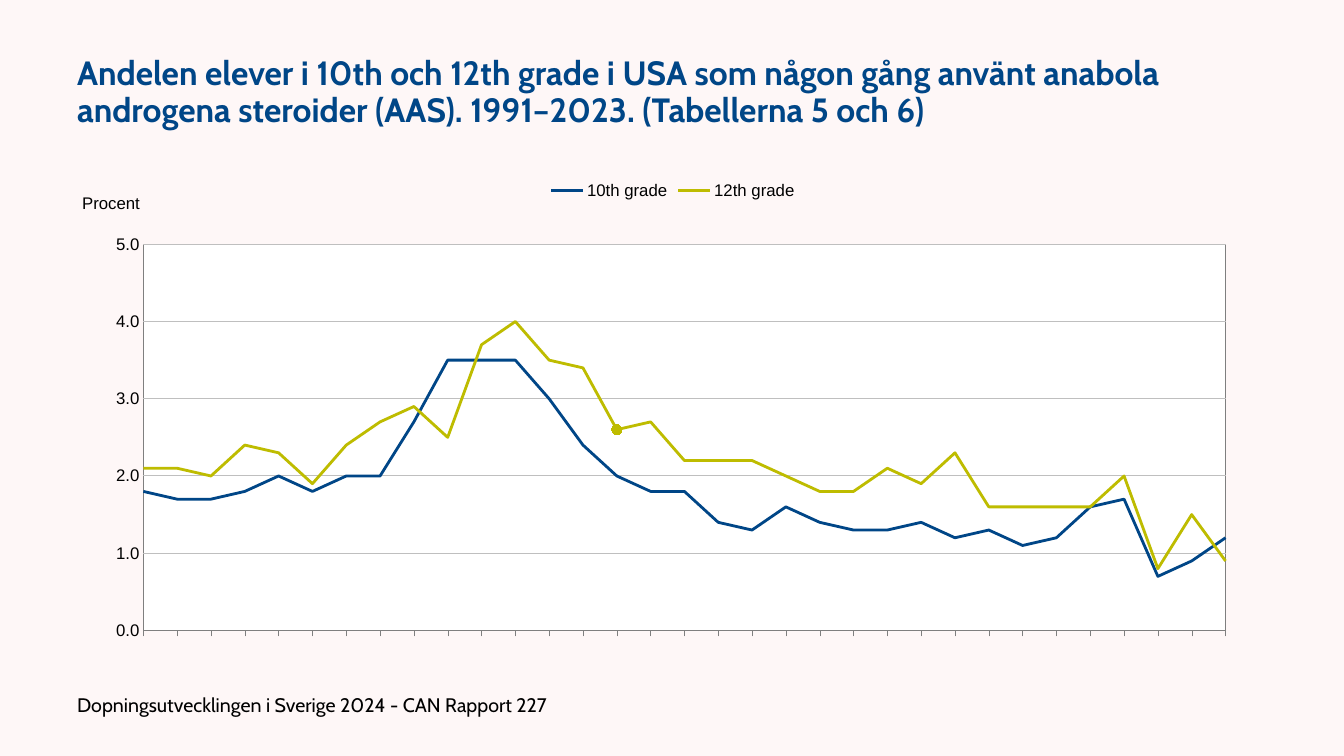
import pptx
import pptx.chart.data
import pptx.dml.color
import pptx.enum.chart
import pptx.enum.text
import pptx.oxml
import pptx.oxml.ns
import pptx.oxml.xmlchemy
import pptx.util

PX = 914400 / 100.8
COLORS = {"page": "FEF7F7", "blue": "004687", "olive": "BEBC00", "text": "000000",
          "plot": "FFFFFF", "axis": "7F7F7F", "grid": "BFBFBF"}
YEARS = range(1991, 2024)
GRADES = [
    ("10th grade", "blue",
     [1.8, 1.7, 1.7, 1.8, 2, 1.8, 2, 2, 2.7, 3.5, 3.5, 3.5, 3, 2.4, 2, 1.8, 1.8,
      1.4, 1.3, 1.6, 1.4, 1.3, 1.3, 1.4, 1.2, 1.3, 1.1, 1.2, 1.6, 1.7, 0.7, 0.9, 1.2]),
    ("12th grade", "olive",
     [2.1, 2.1, 2, 2.4, 2.3, 1.9, 2.4, 2.7, 2.9, 2.5, 3.7, 4, 3.5, 3.4, 2.6, 2.7, 2.2,
      2.2, 2.2, 2, 1.8, 1.8, 2.1, 1.9, 2.3, 1.6, 1.6, 1.6, 1.6, 2, 0.8, 1.5, 0.9]),
]
MARKED_YEAR = 2005


def px(length):
    return pptx.util.Emu(round(length * PX))


def color(name):
    return pptx.dml.color.RGBColor.from_string(COLORS[name])


def style_font(font, size, face, shade="text", bold=False):
    font.size = pptx.util.Pt(size)
    font.name = face
    font.bold = bold
    font.color.rgb = color(shade)


def style_line(line, shade, width):
    line.color.rgb = color(shade)
    line.width = pptx.util.Pt(width)


def chart_xml(body):
    """Return an element from chart markup."""
    tag, rest = body.split(" ", 1)
    return pptx.oxml.parse_xml(f"<{tag} {pptx.oxml.ns.nsdecls('c', 'a')} {rest}")


def drop(parent, tag):
    for child in parent.findall(pptx.oxml.ns.qn(tag)):
        parent.remove(child)


def manual_layout(x, y, size=None):
    """Return a layout placed by fractions of the chart's width and height."""
    parts = [("xMode", "edge"), ("yMode", "edge"), ("x", x), ("y", y)]
    if size:
        parts = [("layoutTarget", "inner"), *parts, ("w", size[0]), ("h", size[1])]
    values = "".join(f'<c:{tag} val="{value}"/>' for tag, value in parts)
    return chart_xml(f"c:layout ><c:manualLayout>{values}</c:manualLayout></c:layout>")


def fill_placeholder(holder, box, text, size, shade, bold=False):
    holder.left, holder.top, holder.width, holder.height = map(px, box)
    frame = holder.text_frame
    frame.word_wrap = True
    frame.auto_size = pptx.enum.text.MSO_AUTO_SIZE.NONE
    frame.vertical_anchor = pptx.enum.text.MSO_ANCHOR.MIDDLE
    para = frame.paragraphs[0]
    para.alignment = pptx.enum.text.PP_ALIGN.LEFT
    para.line_spacing = 0.9
    para.space_before = pptx.util.Pt(0)
    properties = para._p.get_or_add_pPr()
    properties.set("marL", "0")
    properties.set("indent", "0")
    properties.append(pptx.oxml.parse_xml(f"<a:buNone {pptx.oxml.ns.nsdecls('a')}/>"))
    span = para.add_run()
    span.text = text
    style_font(span.font, size, "Cabin", shade, bold)


def style_year_axis(axis):
    axis.tick_label_position = pptx.enum.chart.XL_TICK_LABEL_POSITION.NONE
    axis.major_tick_mark = pptx.enum.chart.XL_TICK_MARK.OUTSIDE
    axis.minor_tick_mark = pptx.enum.chart.XL_TICK_MARK.NONE
    style_line(axis.format.line, "axis", 0.25)


def style_percent_axis(axis):
    axis.minimum_scale, axis.maximum_scale, axis.major_unit = 0, 5, 1
    axis.major_tick_mark = pptx.enum.chart.XL_TICK_MARK.NONE
    axis.minor_tick_mark = pptx.enum.chart.XL_TICK_MARK.NONE
    axis.tick_labels.number_format = "0.0"
    axis.tick_labels.number_format_is_linked = False
    style_font(axis.tick_labels.font, 12, "Arial")
    axis.format.line.fill.background()
    style_line(axis.major_gridlines.format.line, "grid", 0.75)

    frame = axis.axis_title.text_frame
    frame._txBody.bodyPr.set("rot", "0")
    frame._txBody.bodyPr.set("vert", "horz")
    span = frame.paragraphs[0].add_run()
    span.text = "Procent"
    style_font(span.font, 12, "Arial")
    title = axis.axis_title._element
    drop(title, "c:layout")
    title.find(pptx.oxml.ns.qn("c:tx")).addnext(manual_layout(0.01, 0.04))

    # Lines start and end on the edges of the plot.
    drop(axis._element, "c:crossBetween")
    crosses = axis._element.find(pptx.oxml.ns.qn("c:crosses"))
    crosses.addnext(chart_xml('c:crossBetween val="midCat"/>'))


def style_plot_area(chart):
    area = chart._chartSpace.chart.plotArea
    drop(area, "c:layout")
    area.insert(0, manual_layout(0.063, 0.149, (0.893, 0.774)))
    area.append(chart_xml(
        f'c:spPr ><a:solidFill><a:srgbClr val="{COLORS["plot"]}"/></a:solidFill>'
        f'<a:ln w="3175"><a:solidFill><a:srgbClr val="{COLORS["axis"]}"/></a:solidFill>'
        "</a:ln></c:spPr>"))


def mark_year(series, shade):
    point = series.points[YEARS.index(MARKED_YEAR)]
    style_line(point.format.line, shade, 2)
    point.marker.style = pptx.enum.chart.XL_MARKER_STYLE.CIRCLE
    point.marker.size = 7
    point.marker.format.fill.solid()
    point.marker.format.fill.fore_color.rgb = color(shade)
    style_line(point.marker.format.line, shade, 0.75)


def add_grade_chart(page, box):
    data = pptx.chart.data.CategoryChartData(number_format="0.0")
    data.categories = [str(year) for year in YEARS]
    for name, _, values in GRADES:
        data.add_series(name, values)
    chart = page.shapes.add_chart(
        pptx.enum.chart.XL_CHART_TYPE.LINE, *map(px, box), data).chart
    chart.has_title = False
    style_font(chart.font, 12, "Arial")
    chart.has_legend = True
    chart.legend.position = pptx.enum.chart.XL_LEGEND_POSITION.TOP
    chart.legend.include_in_layout = False
    style_font(chart.legend.font, 12, "Arial")
    chart.plots[0].vary_by_categories = False
    for series, (_, shade, _) in zip(chart.plots[0].series, GRADES):
        series.smooth = False
        series.marker.style = pptx.enum.chart.XL_MARKER_STYLE.NONE
        style_line(series.format.line, shade, 2)
    mark_year(chart.plots[0].series[1], "olive")
    style_year_axis(chart.category_axis)
    style_percent_axis(chart.value_axis)
    style_plot_area(chart)


def build_chart_slide(deck):
    page = deck.slides.add_slide(deck.slide_layouts[1])
    page.background.fill.solid()
    page.background.fill.fore_color.rgb = color("page")
    fill_placeholder(
        page.shapes.title, (67, 30, 1210, 126),
        "Andelen elever i 10th och 12th grade i USA som någon gång använt anabola "
        "androgena steroider (AAS). 1991–2023. (Tabellerna 5 och 6)",
        24, "blue", bold=True)
    fill_placeholder(
        page.placeholders[1], (67, 688, 605, 37),
        "Dopningsutvecklingen i Sverige 2024 - CAN Rapport 227", 14, "text")
    add_grade_chart(page, (67, 170, 1212, 499))


def main():
    deck = pptx.Presentation()
    deck.slide_width, deck.slide_height = px(1344), px(756)
    build_chart_slide(deck)
    deck.save("out.pptx")


if __name__ == "__main__":
    main()
